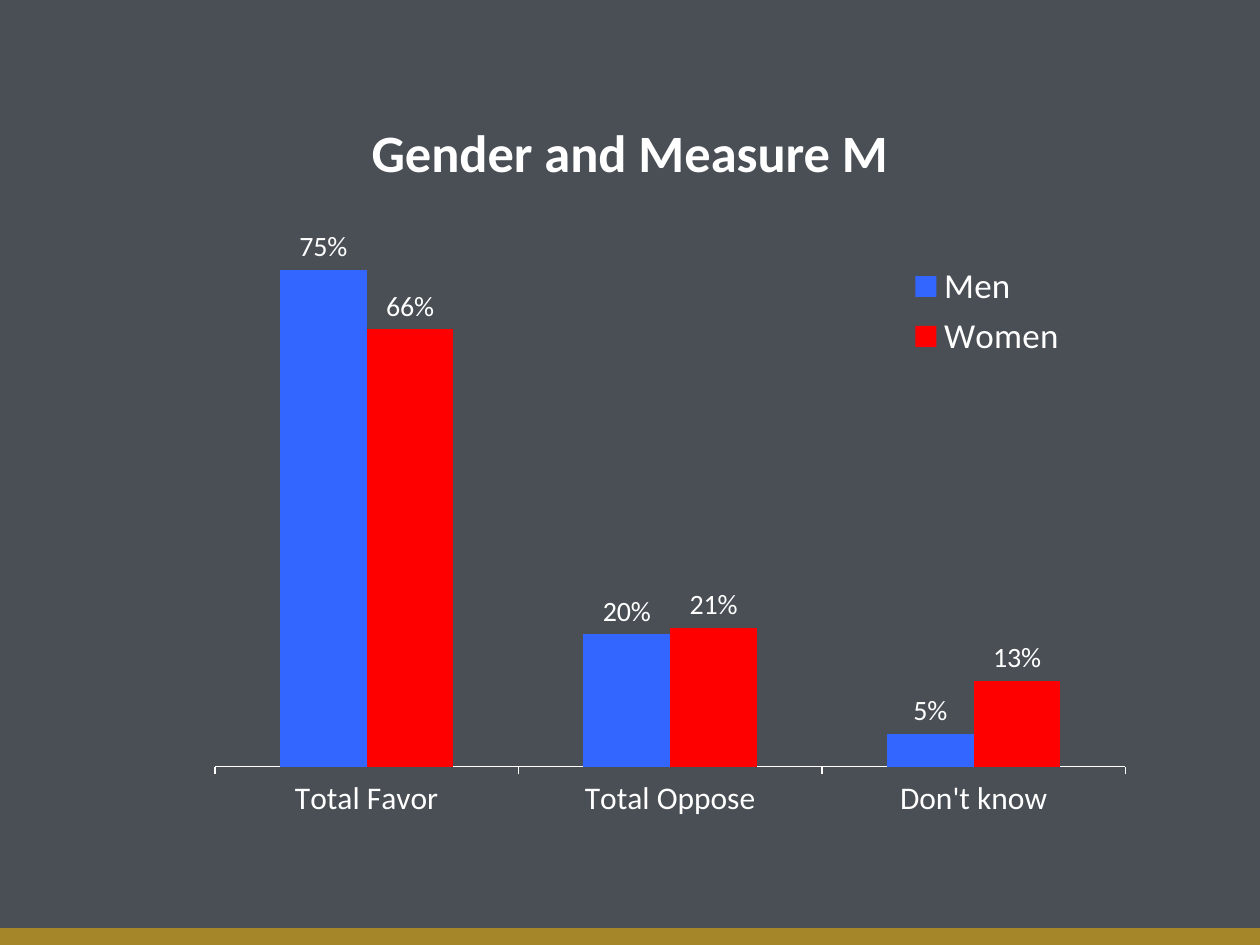
from lxml import etree
from pptx import Presentation
from pptx.chart.data import CategoryChartData
from pptx.dml.color import RGBColor
from pptx.enum.chart import XL_CHART_TYPE, XL_LABEL_POSITION, XL_LEGEND_POSITION, XL_TICK_MARK
from pptx.enum.shapes import MSO_SHAPE
from pptx.enum.text import MSO_ANCHOR, PP_ALIGN
from pptx.oxml.ns import qn
from pptx.util import Emu, Pt

COLUMNS = XL_CHART_TYPE.COLUMN_CLUSTERED
OUTSIDE_END = XL_LABEL_POSITION.OUTSIDE_END
RIGHT = XL_LEGEND_POSITION.RIGHT
TICK_OUT = XL_TICK_MARK.OUTSIDE
RECTANGLE = MSO_SHAPE.RECTANGLE
MIDDLE = MSO_ANCHOR.MIDDLE
CENTER = PP_ALIGN.CENTER

PX_PER_INCH = 126
FONT = "Calibri"
WHITE, SLATE, GOLD = "FFFFFF", "4A4F55", "A58629"
CATEGORIES = ["Total Favor", "Total Oppose", "Don't know"]
SERIES = [
    ("Men", "3366FF", [0.75, 0.20, 0.05]),
    ("Women", "FF0000", [0.66, 0.21, 0.13]),
]


def px(length):
    """Turn a length in px into EMU."""
    return Emu(round(length * 914400 / PX_PER_INCH))


def color(hex_code):
    """Turn a hex string into a colour."""
    return RGBColor.from_string(hex_code)


def style_font(font, size, bold=False):
    """Set the shared typeface and white colour at a given size."""
    font.name = FONT
    font.size = Pt(size)
    font.bold = bold
    font.color.rgb = color(WHITE)


def add_footer_bar(page):
    """Draw the gold strip along the bottom edge."""
    bar = page.shapes.add_shape(RECTANGLE, px(0), px(929), px(1260), px(16))
    bar.shadow.inherit = False
    bar.fill.solid()
    bar.fill.fore_color.rgb = color(GOLD)
    bar.line.color.rgb = color(GOLD)
    bar.line.width = Pt(0.75)


def set_title(page, text):
    """Place and format the title placeholder."""
    title = page.shapes.title
    title.left, title.top, title.width, title.height = px(63), px(69), px(1134), px(166)
    title.text_frame.vertical_anchor = MIDDLE
    para = title.text_frame.paragraphs[0]
    para.alignment = CENTER
    span = para.add_run()
    span.text = text
    style_font(span.font, 30, bold=True)


def set_layout(element, before, x, y, w, h, inner=False):
    """Fix a chart part's place as fractions of the chart frame."""
    for old in element.findall(qn("c:layout")):
        element.remove(old)
    layout = etree.Element(qn("c:layout"))
    manual = etree.SubElement(layout, qn("c:manualLayout"))
    settings = [("layoutTarget", "inner")] if inner else []
    settings += [("xMode", "edge"), ("yMode", "edge"), ("x", x), ("y", y), ("w", w), ("h", h)]
    for name, value in settings:
        etree.SubElement(manual, qn(f"c:{name}")).set("val", str(value))
    element.find(qn(before)).addprevious(layout)


def format_axes(chart):
    """Show the category axis and hide the value axis."""
    axis = chart.category_axis
    axis.major_tick_mark = TICK_OUT
    axis.has_major_gridlines = False
    axis.format.line.color.rgb = color(WHITE)
    axis.format.line.width = Pt(0.75)
    style_font(axis.tick_labels.font, 18)
    values = chart.value_axis
    values.minimum_scale, values.maximum_scale = 0, 0.8
    values.has_major_gridlines = False
    values.tick_labels.number_format = "0%"
    values.tick_labels.number_format_is_linked = False
    values.visible = False


def format_series(series, fill):
    """Colour one series and label its columns."""
    series.format.fill.solid()
    series.format.fill.fore_color.rgb = color(fill)
    series.invert_if_negative = False
    labels = series.data_labels
    labels.show_value = True
    labels.number_format = "0%"
    labels.number_format_is_linked = False
    labels.position = OUTSIDE_END
    style_font(labels.font, 16)


def format_legend(chart):
    """Put the legend in the open upper right area."""
    chart.has_legend = True
    legend = chart.legend
    legend.position = RIGHT
    legend.include_in_layout = False
    style_font(legend.font, 20)
    set_layout(chart.element.find(".//" + qn("c:legend")), "c:overlay", 0.74, 0.06, 0.15, 0.17)


def add_column_chart(page):
    """Add the chart of support by gender."""
    data = CategoryChartData(number_format="0%")
    data.categories = CATEGORIES
    for name, _, values in SERIES:
        data.add_series(name, values)
    chart = page.shapes.add_chart(COLUMNS, px(63), px(221), px(1134), px(624), data).chart
    style_font(chart.font, 10)
    chart.has_title = False
    plot = chart.plots[0]
    plot.vary_by_categories = False
    plot.gap_width, plot.overlap = 150, 0
    format_axes(chart)
    for series, (_, fill, _) in zip(plot.series, SERIES):
        format_series(series, fill)
    format_legend(chart)
    plot_area = chart.element.find(".//" + qn("c:plotArea"))
    set_layout(plot_area, "c:barChart", 0.134, 0.025, 0.803, 0.85, inner=True)


def main():
    """Build and save the slide."""
    deck = Presentation()
    deck.slide_width, deck.slide_height = px(1260), px(945)
    page = deck.slides.add_slide(deck.slide_layouts[5])
    page.background.fill.solid()
    page.background.fill.fore_color.rgb = color(SLATE)
    add_footer_bar(page)
    set_title(page, "Gender and Measure M")
    add_column_chart(page)
    deck.save("out.pptx")


if __name__ == "__main__":
    main()
